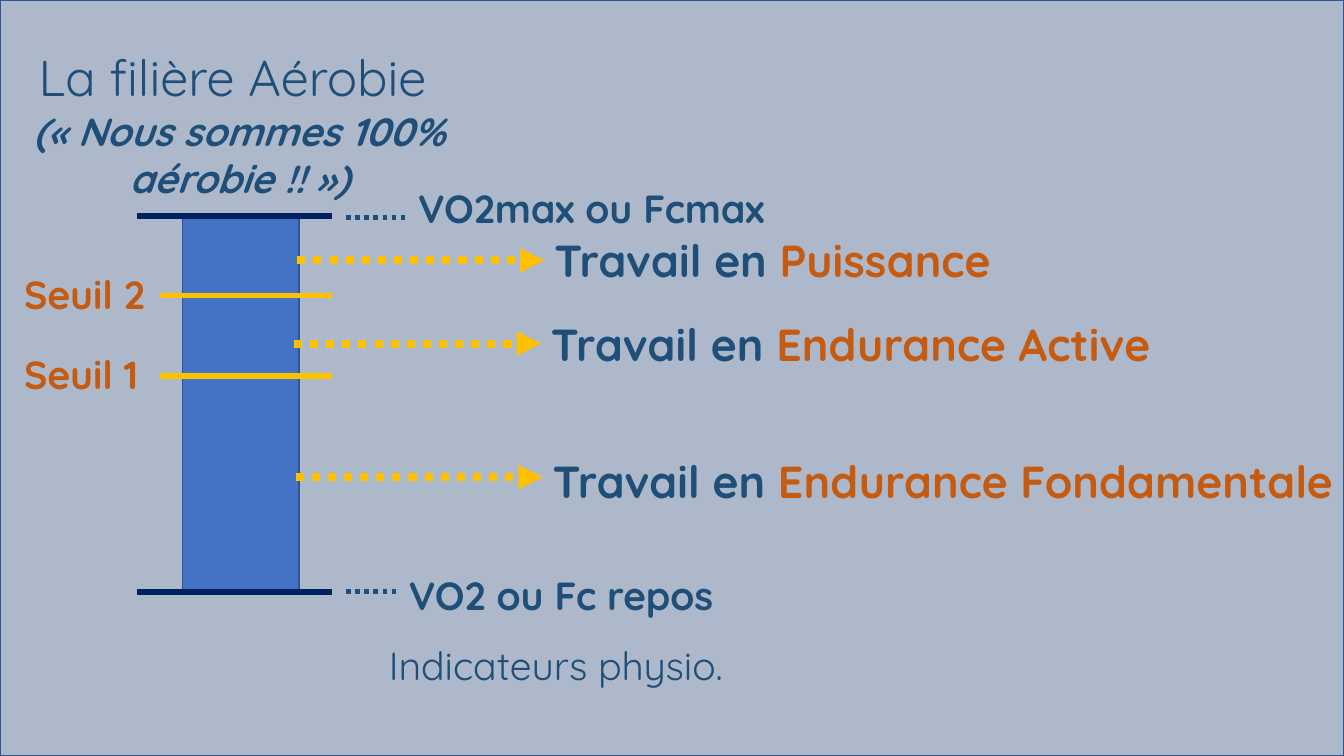
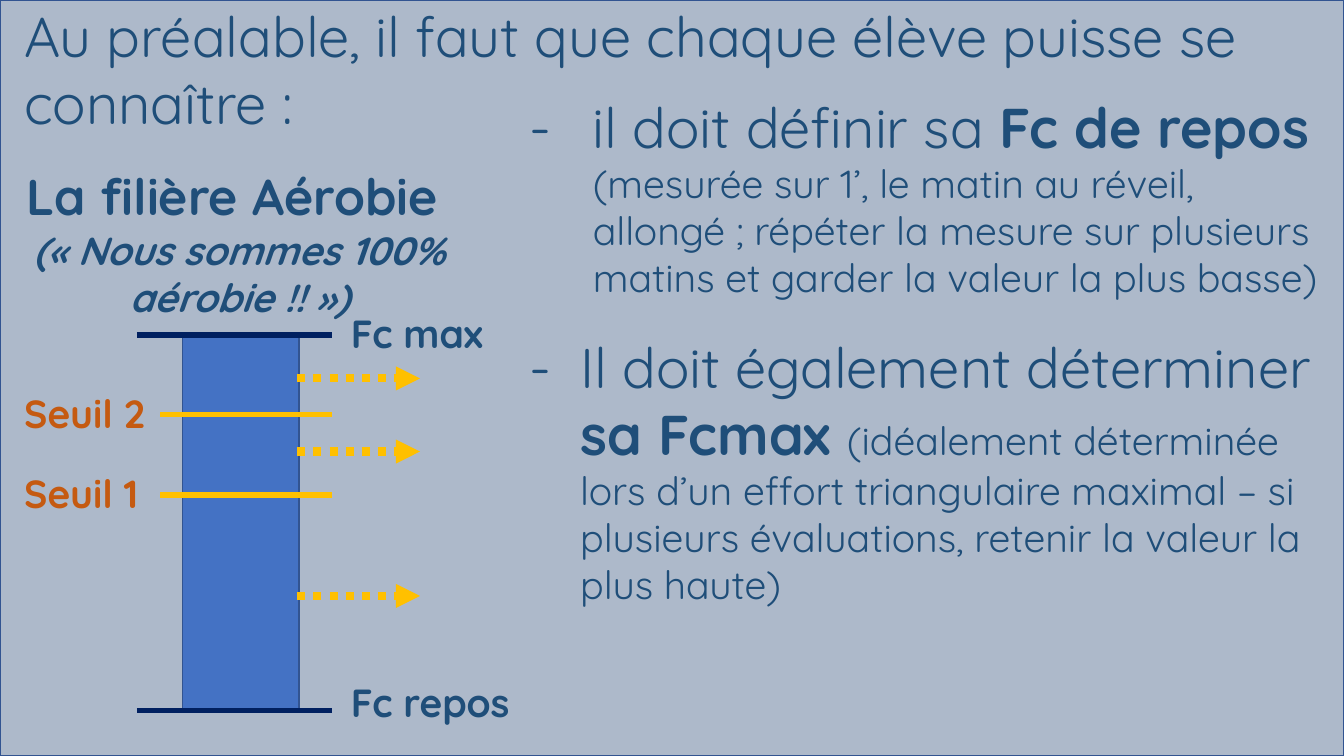
"""Two slides on the aerobic system, laid out on a grid of 160 columns by 90 rows."""
from lxml import etree
from pptx import Presentation
from pptx import util as u
from pptx.dml.color import RGBColor
from pptx.enum import shapes, text
from pptx.oxml.ns import qn

WIDE, HIGH = u.Inches(13.333), u.Inches(7.5)
COLS, ROWS = 160, 90
FONT = "Quicksand"
HUES = {"back": "ADB9CA", "edge": "325491", "bar": "4472C4", "cap": "002060",
        "gold": "FFC000", "ink": "1F4E79", "rust": "C55A11"}
LEFT, CENTER = text.PP_ALIGN.LEFT, text.PP_ALIGN.CENTER
MARGIN = 1.7
BAR_X, BAR_W, BAR_H = 21.7, 13.9, 44.5
CAP_X, MARK_X, END_X = 16.3, 19.1, 39.5
BASE = 44.75
MARKS = [("Seuil 2", 9.5), ("Seuil 1", 19.1)]


def col(n):
    return u.Emu(round(WIDE * n / COLS))


def row(n):
    return u.Emu(round(HIGH * n / ROWS))


def hue(name):
    return RGBColor.from_string(HUES[name])


def rect(slide, x, y, w, h, fill):
    box = slide.shapes.add_shape(shapes.MSO_SHAPE.RECTANGLE, col(x), row(y), col(w), row(h))
    box.shadow.inherit = False
    box.fill.solid()
    box.fill.fore_color.rgb = hue(fill)
    box.line.color.rgb = hue("edge")
    box.line.width = u.Pt(1)


def rule(slide, start, end, y, tint, width=4, dots=False, arrow=False):
    link = slide.shapes.add_connector(shapes.MSO_CONNECTOR.STRAIGHT,
                                      col(start), row(y), col(end), row(y))
    link.line.color.rgb = hue(tint)
    link.line.width = u.Pt(width)
    line = link.line._get_or_add_ln()
    if dots:
        etree.SubElement(line, qn("a:prstDash"), val="sysDot")
    if arrow:
        etree.SubElement(line, qn("a:tailEnd"), type="triangle")
    etree.SubElement(link._element.spPr, qn("a:effectLst"))


def arrow(slide, start, end, y):
    rule(slide, start, end, y, "gold", 5.75, dots=True, arrow=True)


def run(words, size=28, tint="ink", bold=False, slant=False):
    return words, size, tint, bold, slant


def write(slide, x, y, w, h, *paras, align=LEFT):
    box = slide.shapes.add_textbox(col(x), row(y), col(w), row(h))
    frame = box.text_frame
    frame.word_wrap = True
    for i, runs in enumerate(paras):
        para = frame.add_paragraph() if i else frame.paragraphs[0]
        para.alignment = align
        for words, size, tint, bold, slant in runs:
            piece = para.add_run()
            piece.text = words
            font = piece.font
            font.name, font.size = FONT, u.Pt(size)
            font.bold, font.italic = bold, slant
            font.color.rgb = hue(tint)
    return frame


def label(slide, x, y, w, words, tint="ink", bold=True):
    write(slide, x, y, w, 6.8, [run(words, 28, tint, bold)])


def dash(para, indent):
    props = para._p.get_or_add_pPr()
    props.set("marL", str(col(indent)))
    props.set("indent", str(-col(indent)))
    etree.SubElement(props, qn("a:buFont"), typeface=FONT)
    etree.SubElement(props, qn("a:buChar"), char="-")


def gauge(slide, top, bold):
    """Draw the background, the bar with its thresholds, and the heading above it."""
    rect(slide, 0, 0, COLS, ROWS, "back")
    rect(slide, BAR_X, top, BAR_W, BAR_H, "bar")
    for gap in (0, BASE):
        rule(slide, CAP_X, END_X, top + gap, "cap")
    for words, gap in MARKS:
        rule(slide, MARK_X, END_X, top + gap, "gold")
        label(slide, MARGIN, top + gap - 3.65, 17.4, words, "rust")
    write(slide, MARGIN, top - 20.75, 53.6, 19.8,
          [run("La filière Aérobie ", 36, bold=bold)],
          [run("(« Nous sommes 100% aérobie !! »)", bold=True, slant=True)],
          align=CENTER)


def zones(slide):
    top = 25.7
    gauge(slide, top, False)
    label(slide, 45.1, 75.8, 45.4, "Indicateurs physio.", bold=False)
    label(slide, 47.5, 67.4, 40.4, "VO2 ou Fc repos")
    label(slide, 48.6, 21.4, 50.4, "VO2max ou Fcmax")
    for end, y in ((48.2, 25.9), (47.5, top + BASE)):
        rule(slide, 41.2, end, y, "ink", 3.25, dots=True)
    works = [("Puissance", 35.4, 31, 27.1, 56.5),
             ("Endurance Active", 35, 40.9, 37.1, 76.2),
             ("Endurance Fondamentale", 35.2, 56.8, 53.4, 96.1)]
    for words, x, y, head, w in works:
        arrow(slide, x, x + 29.4, y)
        write(slide, x + 29.4, head, w, 7.7,
              [run("Travail en ", 32, bold=True), run(words, 32, "rust", True)])


def pulse(slide):
    top = 39.85
    gauge(slide, top, True)
    for gap in (5.2, 13.9, 31.1):
        arrow(slide, 35.4, 50, top + gap)
    frame = write(
        slide, 61.9, 10.4, 96.2, 78.7,
        [run("il doit définir sa ", 40), run("Fc de repos ", 40, bold=True),
         run("(mesurée sur 1’, le matin au réveil, allongé ; répéter la mesure "
             "sur plusieurs matins et garder la valeur la plus basse)")],
        [run("Il doit également déterminer ", 40), run("sa Fcmax ", 40, bold=True),
         run("(idéalement déterminée lors d’un effort triangulaire maximal – si "
             "plusieurs évaluations, retenir la valeur la plus haute)")])
    frame.paragraphs[1].space_before = u.Pt(22.5)
    for para, indent in zip(frame.paragraphs, (7.5, 6)):
        dash(para, indent)
    for words, y in (("Fc repos", 80.2), ("Fc max", 36.2)):
        label(slide, 40.6, y, 23, words)
    write(slide, MARGIN, -0.4, 155.4, 21,
          [run("Au préalable, il faut que chaque élève puisse se connaître :", 40)])


def main():
    deck = Presentation()
    deck.slide_width, deck.slide_height = WIDE, HIGH
    for build in (zones, pulse):
        build(deck.slides.add_slide(deck.slide_layouts[6]))
    deck.save("out.pptx")


if __name__ == "__main__":
    main()
